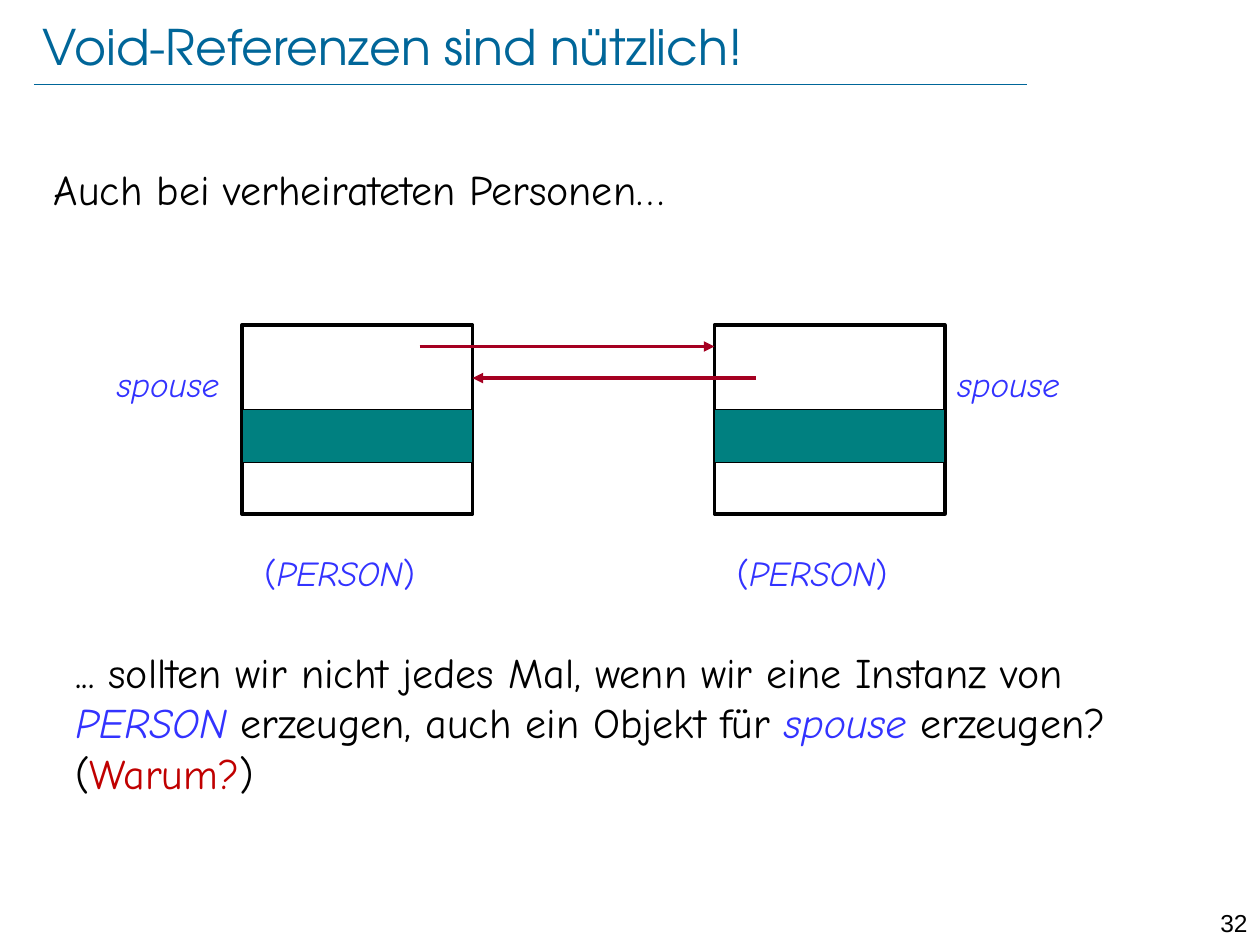
from dataclasses import dataclass

from lxml import etree
from pptx import Presentation
from pptx.dml.color import RGBColor
from pptx.enum.shapes import MSO_CONNECTOR, MSO_SHAPE
from pptx.enum.text import MSO_ANCHOR, MSO_AUTO_SIZE, PP_ALIGN
from pptx.oxml.ns import qn
from pptx.util import Inches, Pt


@dataclass(frozen=True)
class Theme:
    heading: str = "006699"
    ink: str = "000000"
    code: str = "3333FF"
    band: str = "008080"
    reference: str = "A50021"
    question: str = "C00000"
    heading_font: str = "TeX Gyre Adventor"
    body_font: str = "Comic Neue"
    number_font: str = "Arial"
    heading_size: int = 28
    body_size: int = 24
    label_size: int = 20
    number_size: int = 14


THEME = Theme()


def add_text(page, box, spans, size, font=THEME.body_font):
    """Place one paragraph of (text, colour, italic) spans in a box given in inches."""
    text_box = page.shapes.add_textbox(*map(Inches, box))
    frame = text_box.text_frame
    frame.word_wrap = True
    frame.auto_size = MSO_AUTO_SIZE.SHAPE_TO_FIT_TEXT
    para = frame.paragraphs[0]
    for text, colour, italic in spans:
        span = para.add_run()
        span.text = text
        span.font.name = font
        span.font.size = Pt(size)
        span.font.italic = italic
        span.font.color.rgb = RGBColor.from_string(colour)
    return frame


def add_line(page, start, end, colour, width, arrow=False):
    line = page.shapes.add_connector(
        MSO_CONNECTOR.STRAIGHT, *map(Inches, (*start, *end)))
    line.line.color.rgb = RGBColor.from_string(colour)
    line.line.width = Pt(width)
    if arrow:
        outline = line.line._get_or_add_ln()
        etree.SubElement(outline, qn("a:tailEnd"), type="triangle")
    etree.SubElement(line._element.spPr, qn("a:effectLst"))


def add_rectangle(page, box, line_width, fill=None):
    shape = page.shapes.add_shape(MSO_SHAPE.RECTANGLE, *map(Inches, box))
    shape.shadow.inherit = False
    if fill:
        shape.fill.solid()
        shape.fill.fore_color.rgb = RGBColor.from_string(fill)
    else:
        shape.fill.background()
    shape.line.color.rgb = RGBColor.from_string(THEME.ink)
    shape.line.width = Pt(line_width)


def add_heading(page, box, text):
    left, top, width, height = box
    rule_top = top + height + 0.06
    add_line(page, (left - 0.07, rule_top), (8.15, rule_top), THEME.heading, 0.25)
    frame = add_text(page, box, [(text, THEME.heading, False)],
                     THEME.heading_size, THEME.heading_font)
    frame.auto_size = MSO_AUTO_SIZE.NONE
    frame.vertical_anchor = MSO_ANCHOR.MIDDLE
    frame.margin_left = frame.margin_right = 0
    frame.margin_top = frame.margin_bottom = 0


def add_page_number(page, box, number):
    frame = add_text(page, box, [(number, THEME.ink, False)],
                     THEME.number_size, THEME.number_font)
    frame.auto_size = MSO_AUTO_SIZE.NONE
    frame.paragraphs[0].alignment = PP_ALIGN.RIGHT


def add_person(page, box, label_left):
    """Draw an object with its filled field, class name and field label."""
    left, top, width, height = box
    add_rectangle(page, box, 2)
    add_rectangle(page, (left, top + 0.67, width, 0.42), 0.75, THEME.band)
    add_text(page, (left + 0.08, top + height + 0.25, 1.75, 0.43),
             [("(", THEME.code, False), ("PERSON", THEME.code, True),
              (")", THEME.code, False)], THEME.label_size)
    add_text(page, (label_left, top + 0.25, 1.33, 0.43),
             [("spouse", THEME.code, True)], THEME.label_size)


def add_marriage(page, box):
    """Draw two persons at the ends of the box, each referring to the other."""
    left, top, width, height = box
    person_width = 1.83
    husband_right = left + person_width
    right = left + width
    wife_left = right - person_width
    add_person(page, (left, top, person_width, height), left - 1.09)
    add_person(page, (wife_left, top, person_width, height), right)
    references = [(husband_right - 0.42, wife_left, top + 0.17),
                  (wife_left + 0.33, husband_right, top + 0.42)]
    for start, end, level in references:
        add_line(page, (start, level), (end, level), THEME.reference, 2, arrow=True)


def main():
    deck = Presentation()
    deck.slide_width, deck.slide_height = Inches(10), Inches(7.5)
    page = deck.slides.add_slide(deck.slide_layouts[6])

    add_heading(page, (0.34, 0.12, 8.25, 0.49), "Void-Referenzen sind nützlich!")
    add_page_number(page, (9.45, 7.16, 0.55, 0.24), "32")
    add_marriage(page, (1.92, 2.58, 5.58, 1.5))
    add_text(page, (0.33, 1.25, 9.33, 0.5),
             [("Auch bei verheirateten Personen…", THEME.ink, False)],
             THEME.body_size)
    add_text(page, (0.5, 5.08, 9.08, 1.31), [
        ("... sollten wir nicht jedes Mal, wenn wir eine Instanz von ", THEME.ink, False),
        ("PERSON ", THEME.code, True),
        ("erzeugen, auch ein Objekt für ", THEME.ink, False),
        ("spouse", THEME.code, True),
        (" erzeugen? (", THEME.ink, False),
        ("Warum?", THEME.question, False),
        (")", THEME.ink, False),
    ], THEME.body_size)

    deck.save("out.pptx")


if __name__ == "__main__":
    main()
